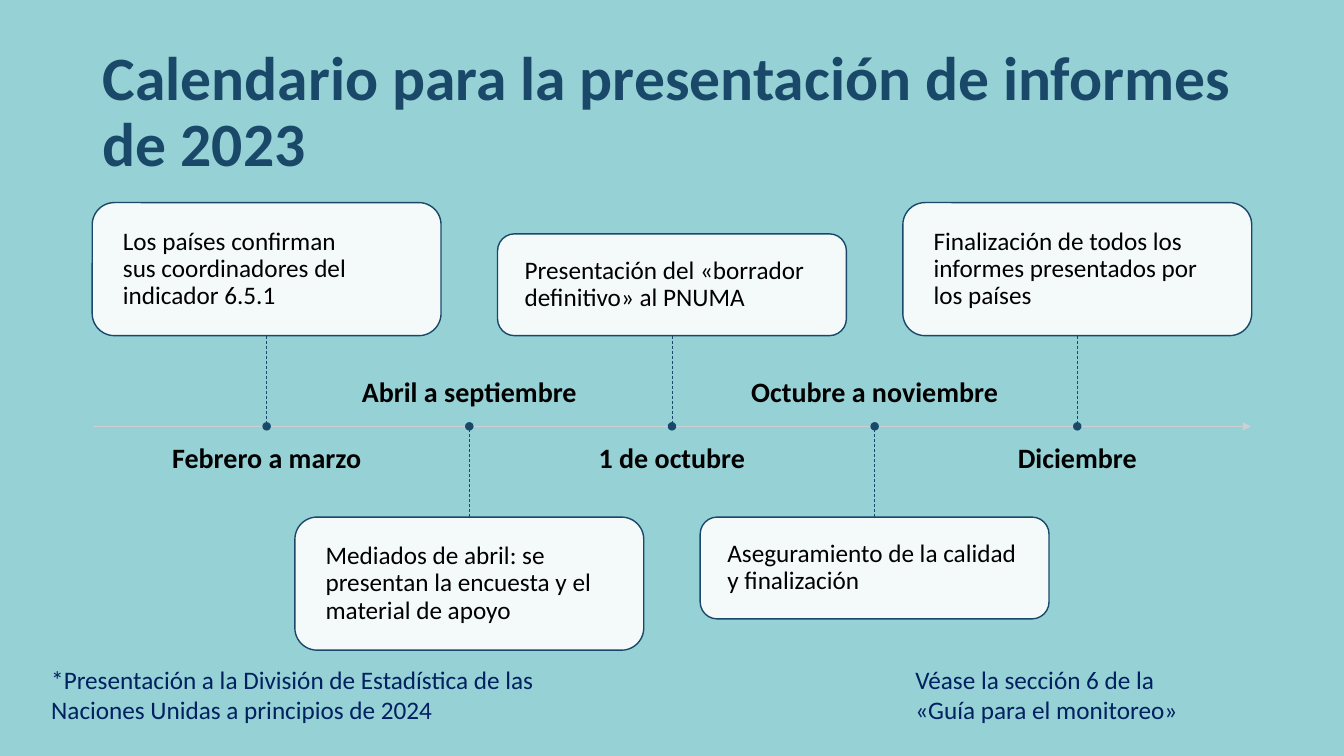
"""Build the 2023 reporting calendar slide as a five-step timeline."""
from pptx import Presentation
from pptx.dml.color import RGBColor
from pptx.enum.dml import MSO_LINE
from pptx.enum.shapes import MSO_CONNECTOR, MSO_SHAPE
from pptx.enum.text import MSO_ANCHOR as Anchor, PP_ALIGN as Align
from pptx.oxml.ns import qn
from pptx.util import Inches, Pt
from lxml.etree import SubElement

BACKGROUND = RGBColor(0x95, 0xD1, 0xD5)
TEAL = RGBColor(0x19, 0x48, 0x69)
GREY = RGBColor(0xCC, 0xCF, 0xD4)
NAVY = RGBColor(0x00, 0x20, 0x60)
WHITE = RGBColor(0xFF, 0xFF, 0xFF)
BLACK = RGBColor(0x00, 0x00, 0x00)

WIDTH, HEIGHT = 13.33, 7.5
MARGIN = 0.92
AXIS_Y = 4.23
STEP = 2.01
CARD_WIDTH, CARD_GAP = 3.46, 0.9
LABEL_WIDTH, LABEL_HEIGHT, LABEL_GAP = 3.04, 0.54, 0.18
DOT = 0.07

MILESTONES = [
    ("Febrero a marzo", "Los países confirman\nsus coordinadores del indicador 6.5.1", 1.32, 0.24),
    ("Abril a septiembre", "Mediados de abril: se presentan la encuesta y el material de apoyo", 1.32, 0.24),
    ("1 de octubre", "Presentación del «borrador definitivo» al PNUMA", 1.01, 0.22),
    ("Octubre a noviembre", "Aseguramiento de la calidad y finalización", 1.01, 0.22),
    ("Diciembre", "Finalización de todos los informes presentados por los países", 1.32, 0.24),
]
NOTES = [
    (0.41, 5.86, "*Presentación a la División de Estadística de las\nNaciones Unidas a principios de 2024"),
    (8.98, 4.19, "Véase la sección 6 de la\n«Guía para el monitoreo»"),
]


def write(shape, text, size=18, color=BLACK, bold=False, align=Align.LEFT,
          anchor=Anchor.TOP, spacing=0.9, inset=(0.1, 0.05)):
    frame = shape.text_frame
    frame.word_wrap = True
    frame.vertical_anchor = anchor
    frame.margin_left = frame.margin_right = Inches(inset[0])
    frame.margin_top = frame.margin_bottom = Inches(inset[1])
    paragraph = frame.paragraphs[0]
    paragraph.alignment = align
    paragraph.line_spacing = spacing
    for index, line in enumerate(text.split("\n")):
        if index:
            paragraph.add_line_break()
        run = paragraph.add_run()
        run.text = line
        run.font.name = "Calibri"
        run.font.size = Pt(size)
        run.font.bold = bold
        run.font.color.rgb = color


def draw_line(start, end, color, width):
    connector = slide.shapes.add_connector(
        MSO_CONNECTOR.STRAIGHT, *(Inches(value) for value in (*start, *end)))
    connector.line.color.rgb = color
    connector.line.width = Pt(width)
    SubElement(connector._element.spPr, qn("a:effectLst"))
    return connector


presentation = Presentation()
presentation.slide_width = Inches(WIDTH)
presentation.slide_height = Inches(HEIGHT)
slide = presentation.slides.add_slide(presentation.slide_layouts[5])
slide.background.fill.solid()
slide.background.fill.fore_color.rgb = BACKGROUND

title = slide.shapes.title
title.left, title.top = Inches(MARGIN), Inches(0.4)
title.width, title.height = Inches(WIDTH - 2 * MARGIN), Inches(1.45)
write(title, "Calendario para la presentación de informes de 2023",
      size=44, color=TEAL, bold=True, anchor=Anchor.MIDDLE)

axis = draw_line((MARGIN, AXIS_Y), (WIDTH - MARGIN, AXIS_Y), GREY, 1)
SubElement(axis.line._get_or_add_ln(), qn("a:tailEnd"), type="triangle")

for index, (date, task, card_height, inset) in enumerate(MILESTONES):
    center = WIDTH / 2 + (index - 2) * STEP
    card_above = index % 2 == 0
    if card_above:
        card_edge = AXIS_Y - CARD_GAP
        card_top = card_edge - card_height
        label_top = AXIS_Y + LABEL_GAP
    else:
        card_edge = card_top = AXIS_Y + CARD_GAP
        label_top = AXIS_Y - LABEL_GAP - LABEL_HEIGHT

    stem = draw_line((center, card_edge), (center, AXIS_Y), TEAL, 0.5)
    stem.line.dash_style = MSO_LINE.DASH

    card = slide.shapes.add_shape(
        MSO_SHAPE.ROUNDED_RECTANGLE, Inches(center - CARD_WIDTH / 2), Inches(card_top),
        Inches(CARD_WIDTH), Inches(card_height))
    dot = slide.shapes.add_shape(
        MSO_SHAPE.OVAL, Inches(center - DOT / 2), Inches(AXIS_Y - DOT / 2),
        Inches(DOT), Inches(DOT))
    for shape, color in ((card, WHITE), (dot, TEAL)):
        shape.shadow.inherit = False
        shape.fill.solid()
        shape.fill.fore_color.rgb = color
        shape.line.color.rgb = TEAL
        shape.line.width = Pt(1)
    card_color = card._element.spPr.find(qn("a:solidFill"))[0]
    SubElement(card_color, qn("a:alpha"), val="90000")
    write(card, task, anchor=Anchor.MIDDLE, inset=(inset, inset))

    label = slide.shapes.add_textbox(
        Inches(center - LABEL_WIDTH / 2), Inches(label_top),
        Inches(LABEL_WIDTH), Inches(LABEL_HEIGHT))
    write(label, date, size=20, bold=True, align=Align.CENTER, inset=(0, 0),
          anchor=Anchor.TOP if card_above else Anchor.BOTTOM)

for left, width, text in NOTES:
    note = slide.shapes.add_textbox(Inches(left), Inches(6.54), Inches(width), Inches(0.71))
    write(note, text, color=NAVY, spacing=1.0)

presentation.save("out.pptx")
